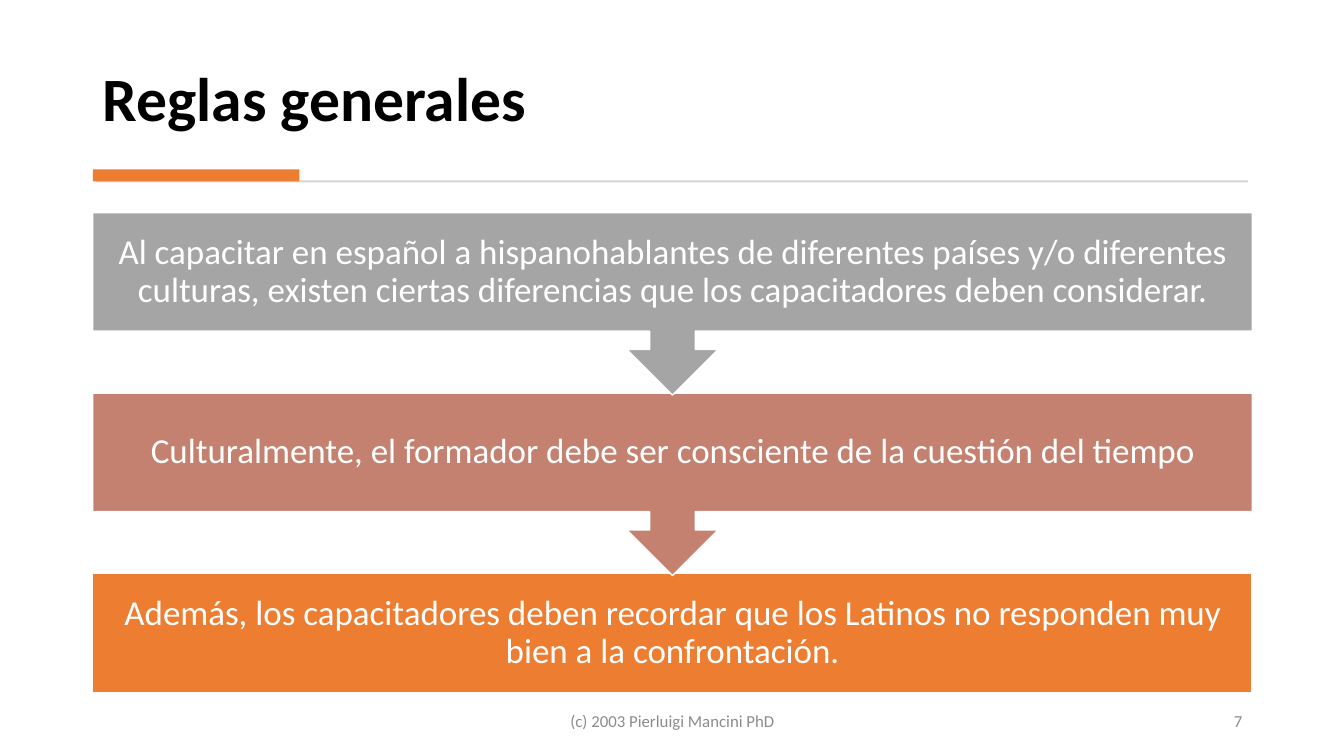
import pptx
import pptx.util
import pptx.dml.color
import pptx.enum.shapes
import pptx.enum.text

Inches = pptx.util.Inches
Pt = pptx.util.Pt
Shape = pptx.enum.shapes.MSO_SHAPE
Align = pptx.enum.text.PP_ALIGN
Anchor = pptx.enum.text.MSO_ANCHOR


def color(hex_string):
    return pptx.dml.color.RGBColor.from_string(hex_string)


def write_text(shape, text, size, hex_color, align=Align.LEFT, anchor=Anchor.MIDDLE,
               bold=False, line_spacing=1.0, inset=None):
    frame = shape.text_frame
    frame.word_wrap = True
    frame.vertical_anchor = anchor
    if inset is not None:
        frame.margin_left = frame.margin_right = Inches(inset)
        frame.margin_top = frame.margin_bottom = Inches(inset)
    paragraph = frame.paragraphs[0]
    paragraph.alignment = align
    paragraph.line_spacing = line_spacing
    run = paragraph.add_run()
    run.text = text
    run.font.name = "Calibri"
    run.font.size = Pt(size)
    run.font.bold = bold
    run.font.color.rgb = color(hex_color)


presentation = pptx.Presentation()
presentation.slide_width = Inches(13.33)
presentation.slide_height = Inches(7.5)
slide = presentation.slides.add_slide(presentation.slide_layouts[6])
shapes = slide.shapes

left, width = 0.92, 11.5

# Title with its rule and accent bar
title = shapes.add_textbox(Inches(left), Inches(0.28), Inches(width), Inches(1.11))
write_text(title, "Reglas generales", 44, "000000", anchor=Anchor.BOTTOM,
           bold=True, line_spacing=0.9)

for bar_left, bar_top, bar_width, bar_height, fill in [
    (0.95, 1.79, 11.43, 0.02, "D5D5D5"),
    (left, 1.68, 2.05, 0.12, "ED7D31"),
]:
    bar = shapes.add_shape(Shape.RECTANGLE, Inches(bar_left), Inches(bar_top),
                           Inches(bar_width), Inches(bar_height))
    bar.shadow.inherit = False
    bar.fill.solid()
    bar.fill.fore_color.rgb = color(fill)
    bar.line.fill.background()

# Steps, stacked from the bottom up so that each arrow tip lies over the next step
first_top, pitch = 2.11, 1.79
steps = [
    (Shape.DOWN_ARROW_CALLOUT, 1.81, "A5A5A5",
     "Al capacitar en español a hispanohablantes de diferentes países y/o diferentes "
     "culturas, existen ciertas diferencias que los capacitadores deben considerar."),
    (Shape.DOWN_ARROW_CALLOUT, 1.81, "C48170",
     "Culturalmente, el formador debe ser consciente de la cuestión del tiempo"),
    (Shape.RECTANGLE, 1.18, "ED7D31",
     "Además, los capacitadores deben recordar que los Latinos no responden muy "
     "bien a la confrontación."),
]
for index, (kind, height, fill, text) in reversed(list(enumerate(steps))):
    step = shapes.add_shape(kind, Inches(left), Inches(first_top + index * pitch),
                            Inches(width), Inches(height))
    step.shadow.inherit = False
    step.fill.solid()
    step.fill.fore_color.rgb = color(fill)
    step.line.color.rgb = color("FFFFFF")
    step.line.width = Pt(1)
    write_text(step, text, 25, "FFFFFF", align=Align.CENTER, line_spacing=0.9, inset=0.19)

# Footer and slide number
for footer_left, footer_width, text, align in [
    (4.42, 4.5, "(c) 2003 Pierluigi Mancini PhD", Align.CENTER),
    (9.42, 3, "7", Align.RIGHT),
]:
    footer = shapes.add_textbox(Inches(footer_left), Inches(6.95),
                                Inches(footer_width), Inches(0.4))
    write_text(footer, text, 12, "8C8C8C", align=align)

presentation.save("out.pptx")
